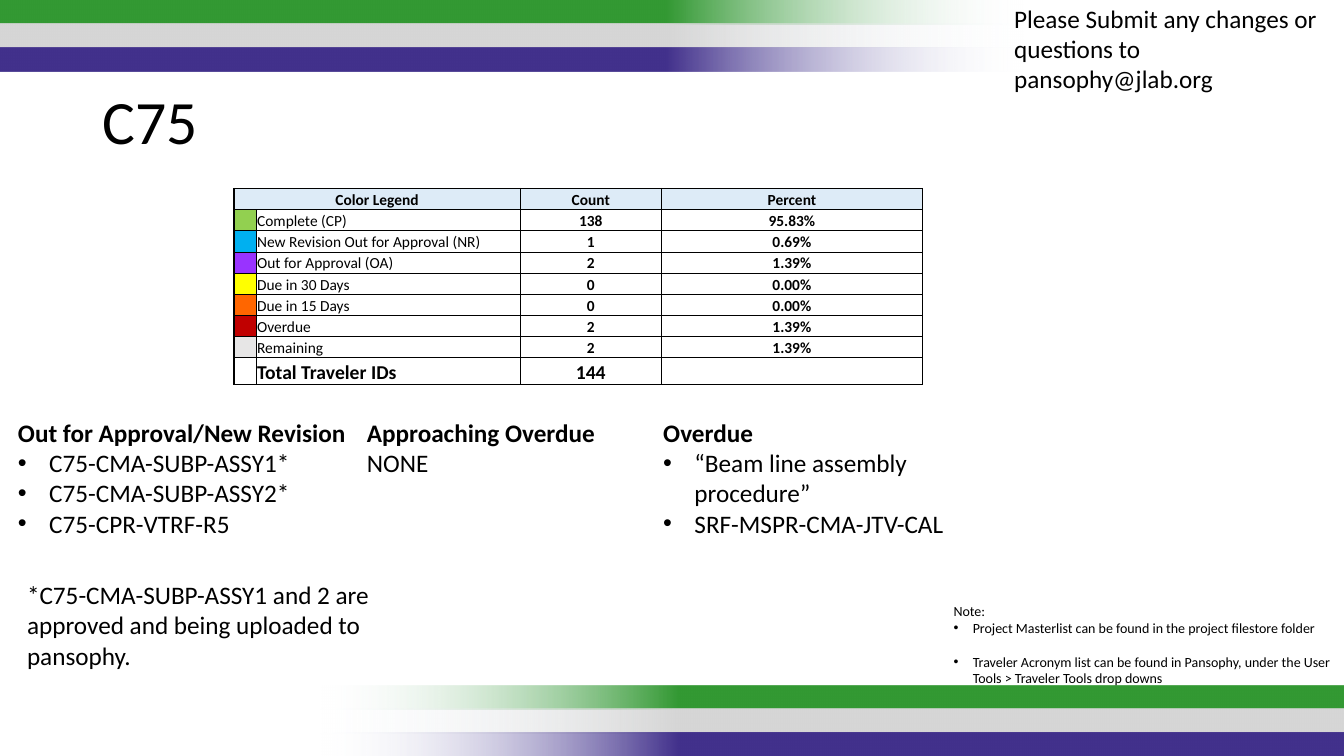
from lxml.etree import SubElement as Sub
from pptx import Presentation
from pptx.dml.color import RGBColor
from pptx.enum.shapes import MSO_SHAPE as Shape
from pptx.enum.text import MSO_ANCHOR as Anchor, MSO_AUTO_SIZE as Fit, PP_ALIGN as Align
from pptx.oxml.ns import qn
from pptx.util import Emu, Inches, Pt

BLACK = "000000"
PALE = "F7FAFD"
HEAD = "DDEBF7"
BANDS = ["339933", "D6D6D6", "42318C"]
COLS = [0.22, 2.62, 1.4, 2.59]
ROW, LAST = 0.21, 0.27
LEGEND = [
    (HEAD, "Color Legend", "Count", "Percent"),
    ("92D050", "Complete (CP)", "138", "95.83%"),
    ("00B0F0", "New Revision Out for Approval (NR)", "1", "0.69%"),
    ("9933FF", "Out for Approval (OA)", "2", "1.39%"),
    ("FFFF00", "Due in 30 Days", "0", "0.00%"),
    ("FF6600", "Due in 15 Days", "0", "0.00%"),
    ("C00000", "Overdue", "2", "1.39%"),
    ("E7E6E6", "Remaining", "2", "1.39%"),
    (None, "Total Traveler IDs", "144", ""),
]


def color(code):
    return RGBColor.from_string(code)


class Deck:
    font = "Calibri"

    def __init__(self):
        self.prs = Presentation()
        self.prs.slide_width = Inches(13.33)
        self.prs.slide_height = Inches(7.5)
        self.slide = self.prs.slides.add_slide(self.prs.slide_layouts[6])

    def band(self, left, top, tint, turn):
        """Draw a bar that fades out at one end."""
        bar = self.slide.shapes.add_shape(
            Shape.RECTANGLE, Inches(left), Inches(top), Inches(10.17), Inches(0.24))
        bar.rotation = turn
        bar.shadow.inherit = False
        bar.line.fill.background()
        bar.fill.gradient()
        bar.fill.gradient_angle = 0
        fade, full = bar.fill.gradient_stops
        fade.color.rgb, fade.position = color(PALE), 0
        full.color.rgb, full.position = color(tint), 0.35
        rgb = next(bar.fill._xPr.iter(qn("a:srgbClr")))
        Sub(rgb, qn("a:alpha"), val="0")

    def run(self, para, words, size, bold=False):
        run = para.add_run()
        run.text = words
        font = run.font
        font.name, font.size, font.bold = self.font, Pt(size), bold
        font.color.rgb = color(BLACK)

    def bullet(self, para, indent):
        props = para._p.get_or_add_pPr()
        props.set("marL", str(Inches(indent)))
        props.set("indent", str(-Inches(indent)))
        Sub(props, qn("a:buFont"), typeface="Arial")
        Sub(props, qn("a:buChar"), char="•")

    def text(self, at, first, items=(), size=18, bold=False, indent=0.31, gap=0):
        """Add a box with a lead line, then items; a zero indent means no bullets."""
        box = self.slide.shapes.add_textbox(*map(Inches, at))
        frame = box.text_frame
        frame.word_wrap = True
        frame.auto_size = Fit.SHAPE_TO_FIT_TEXT
        self.run(frame.paragraphs[0], first, size, bold)
        for i, item in enumerate(items):
            para = frame.add_paragraph()
            if gap and i:
                para.space_before = Pt(gap)
            if indent:
                self.bullet(para, indent)
            self.run(para, item, size)
        return frame

    def border(self, cell, widths):
        props = cell._tc.get_or_add_tcPr()
        for side, width in zip("LRTB", widths):
            line = Sub(props, qn(f"a:ln{side}"), w=str(Pt(width)))
            Sub(Sub(line, qn("a:solidFill")), qn("a:srgbClr"), val=BLACK)

    def cell(self, cell, words, size, bold, mid, fill, widths):
        cell.margin_left = cell.margin_right = cell.margin_top = Inches(0.01)
        cell.margin_bottom = Emu(0)
        cell.vertical_anchor = Anchor.BOTTOM
        self.border(cell, widths)
        if fill:
            cell.fill.solid()
            cell.fill.fore_color.rgb = color(fill)
        else:
            cell.fill.background()
        para = cell.text_frame.paragraphs[0]
        para.alignment = Align.CENTER if mid else Align.LEFT
        if words:
            self.run(para, words, size, bold)
        else:
            Sub(para._p, qn("a:endParaRPr"), sz=str(size * 100))

    def table(self, left, top, rows):
        end = len(rows) - 1
        tall = [ROW] * end + [LAST]
        grid = self.slide.shapes.add_table(
            len(rows), len(COLS), Inches(left), Inches(top),
            Inches(sum(COLS)), Inches(sum(tall))).table
        grid.first_row = grid.horz_banding = False
        for col, wide in zip(grid.columns, COLS):
            col.width = Inches(wide)
        for row, high in zip(grid.rows, tall):
            row.height = Inches(high)
        grid.cell(0, 0).merge(grid.cell(0, 1))
        for r, (tint, label, *values) in enumerate(rows):
            head, foot = r == 0, r == end
            words = [label, "", *values] if head else ["", label, *values]
            for c, word in enumerate(words):
                widths = (1 if c == 0 else 0.5, 1 if head and c == 3 else 0.5,
                          1 if head else 0.5, 1 if foot else 0.5)
                self.cell(grid.cell(r, c), word, 14 if foot else 11,
                          head or foot or c > 1, head or c > 1,
                          tint if head or c == 0 else None, widths)


def main():
    deck = Deck()
    for i, tint in enumerate(BANDS):
        deck.band(-0.01, i * 0.235, tint, 180)
        deck.band(3.18, 6.8 + i * 0.235, tint, 0)

    title = deck.text((0.92, 0.86, 11.5, 0.99), "C75", size=44)
    title.auto_size = Fit.NONE
    title.paragraphs[0].line_spacing = 0.9
    deck.table(2.32, 1.87, LEGEND)

    deck.text((0.08, 4.09, 3.45, 1.31), "Out for Approval/New Revision",
              ["C75-CMA-SUBP-ASSY1*", "C75-CMA-SUBP-ASSY2*", "C75-CPR-VTRF-R5"],
              bold=True)
    deck.text((3.54, 4.09, 2.95, 0.71), "Approaching Overdue", ["NONE"],
              bold=True, indent=0)
    late = deck.text((6.48, 4.09, 6.03, 1.31), "Overdue",
                     ["“Beam line assembly procedure”", "SRF-MSPR-CMA-JTV-CAL"],
                     bold=True)
    late._txBody.bodyPr.set("numCol", "2")

    deck.text((9.96, -0.02, 3.38, 1.01),
              "Please Submit any changes or questions to pansophy@jlab.org")
    deck.text((9.36, 5.93, 3.97, 0.94), "Note:",
              ["Project Masterlist can be found in the project filestore folder",
               "Traveler Acronym list can be found in Pansophy, under the User "
               "Tools > Traveler Tools drop downs"],
              size=10, indent=0.19, gap=12)
    deck.text((0.17, 5.7, 4.04, 1.01),
              "*C75-CMA-SUBP-ASSY1 and 2 are approved and being uploaded to pansophy.")
    deck.prs.save("out.pptx")


if __name__ == "__main__":
    main()
